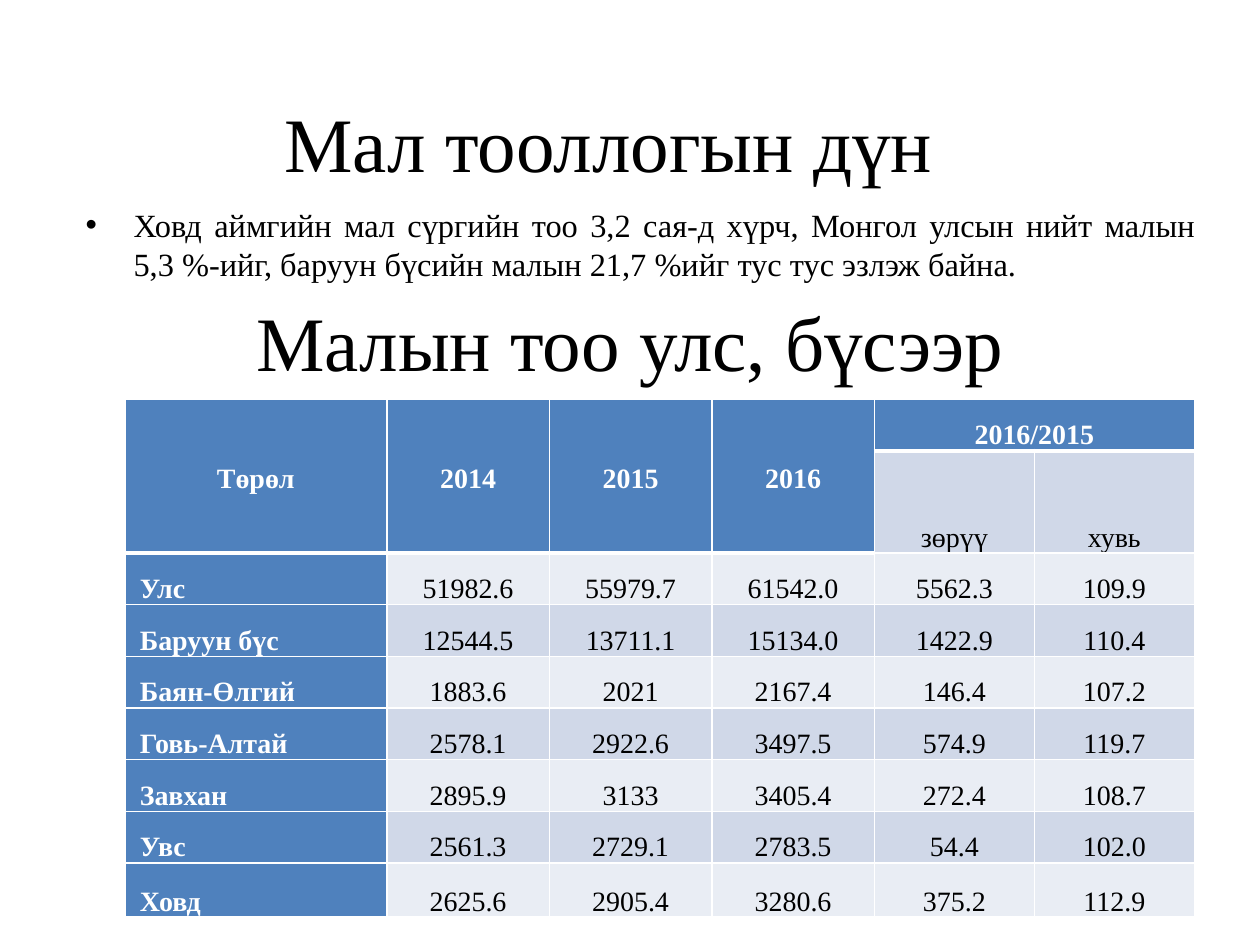
from lxml.etree import SubElement
from pptx import Presentation
from pptx.dml.color import RGBColor
from pptx.enum.text import MSO_ANCHOR, MSO_AUTO_SIZE, PP_ALIGN
from pptx.oxml.ns import qn
from pptx.util import Inches, Pt

COLORS = {"text": "000000", "white": "FFFFFF", "accent": "4F81BD",
          "band": "D0D8E8", "light": "E9EDF4"}
YEARS = ["2014", "2015", "2016"]
HEADER = ["Төрөл", *YEARS, "2016/2015", ""]
SUBHEADER = ["", "", "", "", "зөрүү", "хувь"]
LIVESTOCK = [
    ["Улс", "51982.6", "55979.7", "61542.0", "5562.3", "109.9"],
    ["Баруун бүс", "12544.5", "13711.1", "15134.0", "1422.9", "110.4"],
    ["Баян-Өлгий", "1883.6", "2021", "2167.4", "146.4", "107.2"],
    ["Говь-Алтай", "2578.1", "2922.6", "3497.5", "574.9", "119.7"],
    ["Завхан", "2895.9", "3133", "3405.4", "272.4", "108.7"],
    ["Увс", "2561.3", "2729.1", "2783.5", "54.4", "102.0"],
    ["Ховд", "2625.6", "2905.4", "3280.6", "375.2", "112.9"],
]
COLUMN_WIDTHS = [2.08, 1.29, 1.29, 1.29, 1.27, 1.27]
ROW_HEIGHTS = [0.41, 0.81] + [0.41] * 6 + [0.43]
MERGED_COLUMNS = 4  # columns whose header spans both header rows


def is_header(row, column):
    return row == 0 or (row == 1 and column < MERGED_COLUMNS)


def ends_header(row, column):
    return row == (1 if column < MERGED_COLUMNS else 0)


class SlideBuilder:
    font_name = "Times New Roman"

    def __init__(self, slide):
        self.slide = slide

    def set_text(self, frame, text, size, align, color="text", bold=False):
        frame.text = text
        paragraph = frame.paragraphs[0]
        paragraph.alignment = align
        for run in paragraph.runs:
            run.font.name = self.font_name
            run.font.size = Pt(size)
            run.font.bold = bold
            run.font.color.rgb = RGBColor.from_string(COLORS[color])
        return paragraph

    def place(self, shape, left, top, width, height):
        shape.left, shape.top = Inches(left), Inches(top)
        shape.width, shape.height = Inches(width), Inches(height)

    def heading(self, shape, text):
        frame = shape.text_frame
        frame.word_wrap = True
        frame.auto_size = MSO_AUTO_SIZE.NONE
        frame.vertical_anchor = MSO_ANCHOR.MIDDLE
        self.set_text(frame, text, 44, PP_ALIGN.CENTER)

    def title(self, text, *box):
        title = self.slide.shapes.title
        self.place(title, *box)
        self.heading(title, text)

    def subtitle(self, text, *box):
        self.heading(self.slide.shapes.add_textbox(*map(Inches, box)), text)

    def bullet(self, text, *box):
        body = self.slide.placeholders[1]
        self.place(body, *box)
        body.text_frame.auto_size = MSO_AUTO_SIZE.NONE
        paragraph = self.set_text(body.text_frame, text, 18.5, PP_ALIGN.JUSTIFY)
        paragraph.space_before = Pt(0)
        properties = paragraph._p.get_or_add_pPr()
        properties.set("marL", str(Inches(0.38)))
        properties.set("indent", str(-Inches(0.38)))

    def borders(self, cell, top, bottom):
        properties = cell._tc.get_or_add_tcPr()
        for side, width in (("L", 1), ("R", 1), ("T", top), ("B", bottom)):
            line = SubElement(properties, qn(f"a:ln{side}"), w=str(Pt(width)))
            fill = SubElement(line, qn("a:solidFill"))
            SubElement(fill, qn("a:srgbClr"), val=COLORS["white"])

    def cell(self, cell, text, row, column):
        header = is_header(row, column)
        accent = header or column == 0
        self.borders(cell, 3 if ends_header(row - 1, column) else 1,
                     3 if ends_header(row, column) else 1)
        fill = "accent" if accent else "band" if row % 2 else "light"
        cell.fill.solid()
        cell.fill.fore_color.rgb = RGBColor.from_string(COLORS[fill])
        cell.margin_left = cell.margin_right = Inches(0.12)
        cell.margin_top = cell.margin_bottom = 0
        spans_rows = header and column < MERGED_COLUMNS
        cell.vertical_anchor = MSO_ANCHOR.MIDDLE if spans_rows else MSO_ANCHOR.BOTTOM
        align = PP_ALIGN.JUSTIFY if column == 0 and not header else PP_ALIGN.CENTER
        paragraph = self.set_text(cell.text_frame, text, 16, align,
                                  "white" if accent else "text", accent)
        paragraph.line_spacing = 1.15

    def table(self, rows, left, top):
        frame = self.slide.shapes.add_table(
            len(rows), len(COLUMN_WIDTHS), Inches(left), Inches(top),
            Inches(sum(COLUMN_WIDTHS)), Inches(sum(ROW_HEIGHTS)))
        table = frame.table
        for column, width in zip(table.columns, COLUMN_WIDTHS):
            column.width = Inches(width)
        for row, height in zip(table.rows, ROW_HEIGHTS):
            row.height = Inches(height)
        for row, texts in enumerate(rows):
            for column, text in enumerate(texts):
                self.cell(table.cell(row, column), text, row, column)
        for column in range(MERGED_COLUMNS):
            table.cell(0, column).merge(table.cell(1, column))
        table.cell(0, 4).merge(table.cell(0, 5))


def main():
    presentation = Presentation()
    presentation.slide_width, presentation.slide_height = Inches(10), Inches(7.5)
    builder = SlideBuilder(presentation.slides.add_slide(presentation.slide_layouts[1]))
    builder.title("Мал тооллогын дүн", 0.33, 0.5, 9, 1.25)
    builder.bullet(
        "Ховд аймгийн мал сүргийн тоо 3,2 сая-д хүрч, Монгол улсын нийт малын "
        "5,3 %-ийг, баруун бүсийн малын 21,7 %ийг тус тус эзлэж байна.",
        0.58, 1.58, 9, 0.92)
    builder.subtitle("Малын тоо улс, бүсээр", 0.5, 2.08, 9, 1.25)
    builder.table([HEADER, SUBHEADER, *LIVESTOCK], 0.99, 3.17)
    presentation.save("out.pptx")


if __name__ == "__main__":
    main()
